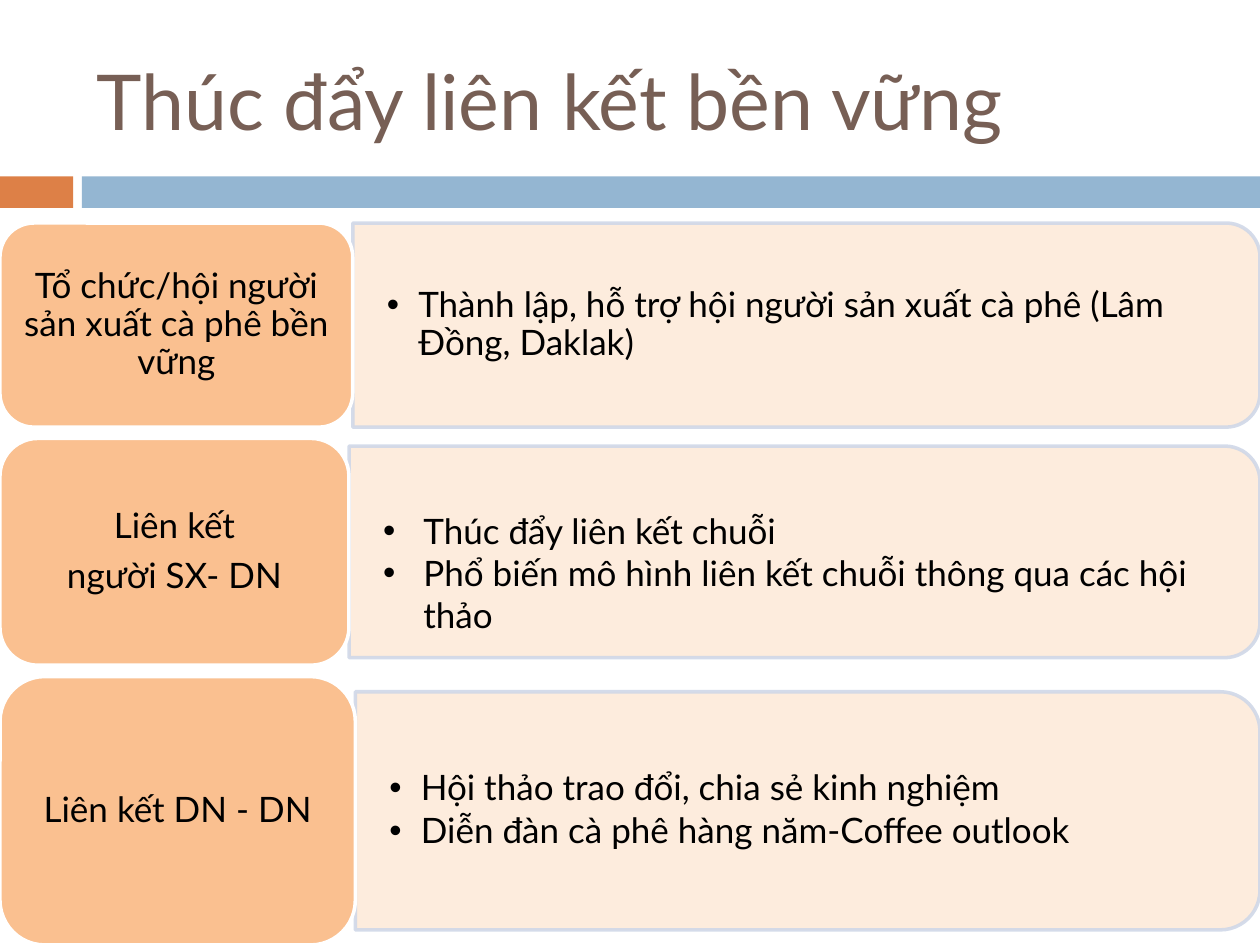
from dataclasses import dataclass

from lxml.etree import SubElement
from pptx import Presentation
from pptx.dml.color import RGBColor
from pptx.enum.shapes import MSO_SHAPE
from pptx.enum.text import MSO_ANCHOR, PP_ALIGN
from pptx.oxml.ns import qn
from pptx.util import Inches, Pt


@dataclass(frozen=True)
class Theme:
    font: str = "Lato"
    title_size: int = 44
    body_size: int = 20
    title: str = "775F55"
    text: str = "000000"
    accent: str = "DD8047"
    band: str = "94B6D2"
    label: str = "FAC090"
    label_line: str = "FFFFFF"
    panel: str = "FDEADA"
    panel_line: str = "D0D8E8"
    panel_opacity: int = 90
    line_width: int = 2
    corner_inset: float = 0.049  # share of a shape's height kept clear of text


class SlideBuilder:
    def __init__(self, page, theme):
        self.page = page
        self.theme = theme

    def shape(self, kind, left, top, width, height, fill, line=None, opacity=100):
        shape = self.page.shapes.add_shape(
            kind, Inches(left), Inches(top), Inches(width), Inches(height))
        shape.shadow.inherit = False
        shape.fill.solid()
        shape.fill.fore_color.rgb = RGBColor.from_string(fill)
        if line:
            shape.line.color.rgb = RGBColor.from_string(line)
            shape.line.width = Pt(self.theme.line_width)
        else:
            shape.line.fill.background()
        if opacity < 100:
            for color in shape.element.spPr.iter(qn("a:srgbClr")):
                SubElement(color, qn("a:alpha"), val=str(opacity * 1000))
        return shape

    def text(self, left, top, width, height, lines, size, color, margins=(0.1, 0.05),
             align=PP_ALIGN.LEFT, spacing=1.0, after=0, bullet_indent=0):
        box = self.page.shapes.add_textbox(
            Inches(left), Inches(top), Inches(width), Inches(height))
        frame = box.text_frame
        frame.word_wrap = True
        frame.vertical_anchor = MSO_ANCHOR.MIDDLE
        frame.margin_left = frame.margin_right = Inches(margins[0])
        frame.margin_top = frame.margin_bottom = Inches(margins[1])
        for index, line in enumerate(lines):
            para = frame.add_paragraph() if index else frame.paragraphs[0]
            para.alignment = align
            para.line_spacing = spacing
            para.space_after = Pt(after)
            if bullet_indent:
                self.bullet(para, bullet_indent)
            span = para.add_run()
            span.text = line
            span.font.name = self.theme.font
            span.font.size = Pt(size)
            span.font.color.rgb = RGBColor.from_string(color)

    def bullet(self, para, indent):
        properties = para._p.get_or_add_pPr()
        properties.set("marL", str(Inches(indent)))
        properties.set("indent", str(-Inches(indent)))
        SubElement(properties, qn("a:buFont"), typeface="Arial")
        SubElement(properties, qn("a:buChar"), char="•")

    def panel(self, left, top, height, lines, indent, spacing, after, text_drop):
        """Panel reaching the right slide edge, rounded on its right side."""
        theme = self.theme
        width = 10 - left
        # A quarter turn swaps the sides around a fixed centre
        shape = self.shape(
            MSO_SHAPE.ROUND_2_SAME_RECTANGLE,
            left + (width - height) / 2, top + (height - width) / 2, height, width,
            theme.panel, theme.panel_line, theme.panel_opacity)
        shape.rotation = 90
        inset = theme.corner_inset * height
        self.text(left, top + inset + text_drop, width - inset,
                  height - 2 * inset - text_drop, lines, theme.body_size, theme.text,
                  margins=(0.27, 0.14), spacing=spacing, after=after,
                  bullet_indent=indent)

    def label(self, top, width, height, lines):
        theme = self.theme
        self.shape(MSO_SHAPE.ROUNDED_RECTANGLE, 0, top, width, height,
                   theme.label, theme.label_line)
        inset = theme.corner_inset * height
        self.text(inset, top + inset, width - 2 * inset, height - 2 * inset, lines,
                  theme.body_size, theme.text, margins=(0.08, 0.04),
                  align=PP_ALIGN.CENTER, spacing=0.9, after=7)


def main():
    deck = Presentation()
    deck.slide_width, deck.slide_height = Inches(10), Inches(7.5)
    page = deck.slides.add_slide(deck.slide_layouts[6])
    theme = Theme()
    builder = SlideBuilder(page, theme)

    # Title and the band below it
    builder.shape(MSO_SHAPE.RECTANGLE, 0, 1.4, 0.58, 0.25, theme.accent)
    builder.shape(MSO_SHAPE.RECTANGLE, 0.65, 1.4, 9.35, 0.25, theme.band)
    builder.text(0.67, 0.25, 8.92, 1.08, ["Thúc đẩy liên kết bền vững"],
                 theme.title_size, theme.title)

    # Rows: label (top, width, height, lines), panel (top, height, lines),
    # bullets (indent, line spacing, space after, text drop)
    rows = [
        ((1.77, 2.8, 1.62, ["Tổ chức/hội người sản xuất cà phê bền vững"]),
         (1.77, 1.62, ["Thành lập, hỗ trợ hội người sản xuất cà phê (Lâm Đồng, Daklak)"]),
         (0.25, 0.9, 3, 0)),
        ((3.48, 2.77, 1.8, ["Liên kết", "người SX- DN"]),
         (3.54, 1.68, ["Thúc đẩy liên kết chuỗi",
                       "Phổ biến mô hình liên kết chuỗi thông qua các hội thảo"]),
         (0.32, 1.0, 0, 0.33)),
        ((5.37, 2.82, 2.13, ["Liên kết DN - DN"]),
         (5.49, 1.89, ["Hội thảo trao đổi, chia sẻ kinh nghiệm",
                       "Diễn đàn cà phê hàng năm-Coffee outlook"]),
         (0.25, 0.9, 3, 0)),
    ]
    for label, panel, bullets in rows:
        label_width = label[1]
        builder.panel(label_width, *panel, *bullets)
        builder.label(*label)

    deck.save("out.pptx")


if __name__ == "__main__":
    main()
